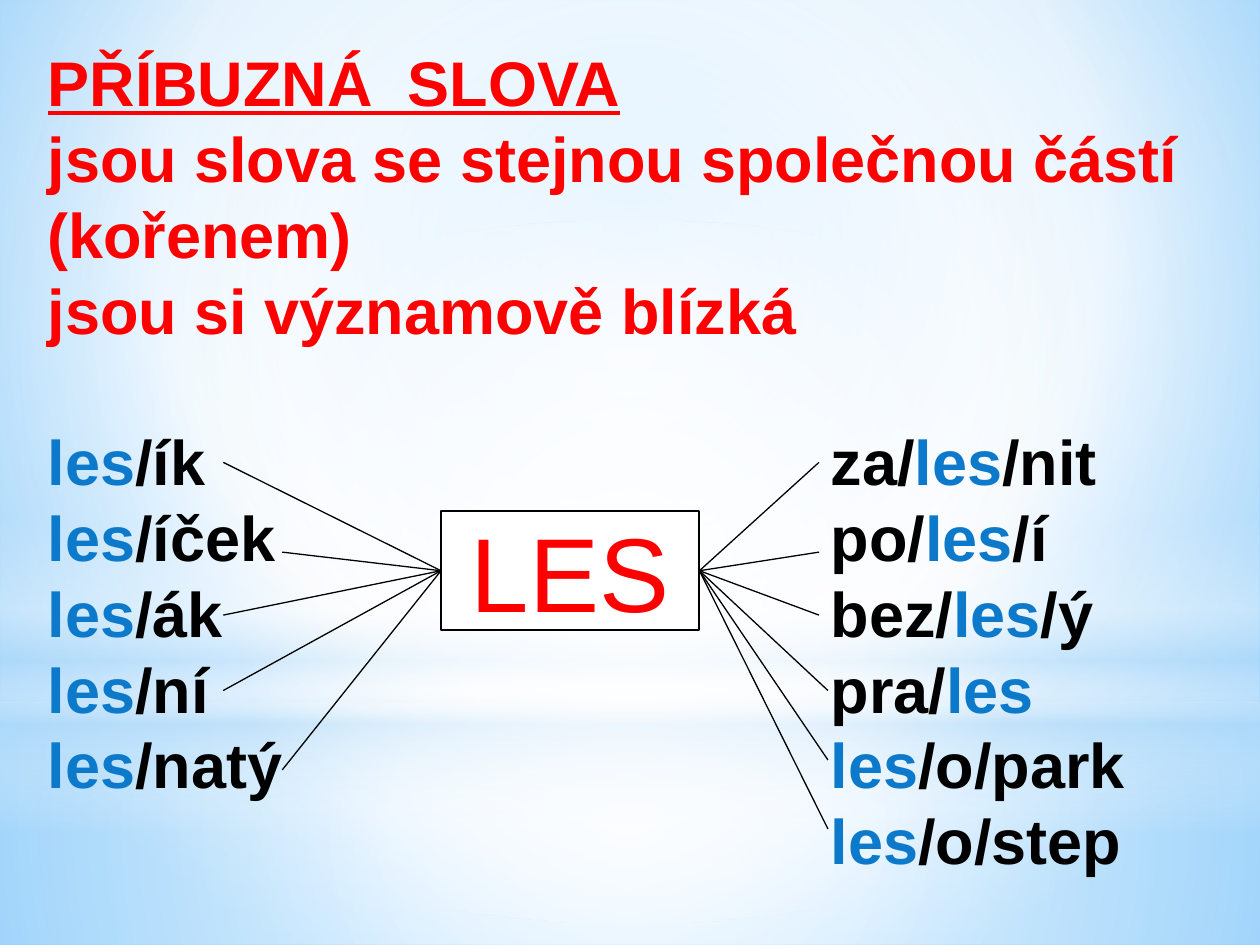
import pptx
import pptx.util
import pptx.dml.color
import pptx.enum.shapes
import pptx.enum.text
import pptx.oxml
import pptx.oxml.ns

Cm, Pt = pptx.util.Cm, pptx.util.Pt
SHAPE = pptx.enum.shapes.MSO_SHAPE
RED, BLUE, BLACK, WHITE, SKY = "FF0000", "0D79CA", "000000", "FFFFFF", "B4DCFA"
PAGE_WIDTH, PAGE_HEIGHT = 25.4, 19.05
ROOT = "les"
CENTRE = (50, 50, 50, 50)
HEADING = ["PŘÍBUZNÁ  SLOVA", "jsou slova se stejnou společnou částí",
           "(kořenem)", "jsou si významově blízká"]
LEFT_WORDS = ["les/ík", "les/íček", "les/ák", "les/ní", "les/natý"]
RIGHT_WORDS = ["za/les/nit", "po/les/í", "bez/les/ý", "pra/les", "les/o/park", "les/o/step"]
LEFT_ENDS = [(4.5, 9.32), (5.69, 11.13), (4.5, 12.4), (4.5, 13.92), (5.69, 15.52)]
RIGHT_ENDS = [(16.51, 9.32), (16.51, 11.13), (16.51, 12.4),
              (16.69, 13.92), (16.69, 15.32), (16.69, 16.71)]


def colour(hex_code):
    """Return the colour for a hex string."""
    return pptx.dml.color.RGBColor.from_string(hex_code)


def paint_gradient(fill, owner, stops, focus=None):
    """Fill with (position, colour, opacity) stops, circular around focus or else vertical."""
    fill.gradient()
    gradient = owner.xpath(".//a:gradFill")[0]
    stop_xml = "".join(
        f'<a:gs pos="{position * 1000}"><a:srgbClr val="{hex_code}">'
        f'<a:alpha val="{opacity * 1000}"/></a:srgbClr></a:gs>'
        for position, hex_code, opacity in stops)
    if focus:
        sides = " ".join(f'{side}="{value * 1000}"' for side, value in zip("ltrb", focus))
        direction = f'<a:path path="circle"><a:fillToRect {sides}/></a:path>'
    else:
        direction = '<a:lin ang="5400000" scaled="0"/>'
    gradient.getparent().replace(gradient, pptx.oxml.parse_xml(
        f'<a:gradFill {pptx.oxml.ns.nsdecls("a")} rotWithShape="1">'
        f'<a:gsLst>{stop_xml}</a:gsLst>{direction}</a:gradFill>'))


def add_glow(slide, outline, top, height, stops, focus=None):
    """Add a full-width gradient layer of the backdrop."""
    glow = slide.shapes.add_shape(outline, 0, Cm(top), Cm(PAGE_WIDTH), Cm(height))
    glow.shadow.inherit = False
    glow.line.fill.background()
    paint_gradient(glow.fill, glow._element, stops, focus)


def add_backdrop(slide):
    """Paint the sky background and its soft layers."""
    paint_gradient(slide.background.fill, slide._element,
                   [(0, "9ED5FF", 100), (60, WHITE, 100), (100, "5BB9FF", 100)],
                   (20, 10, 20, 60))
    horizon = 14.17
    add_glow(slide, SHAPE.RECTANGLE, horizon, PAGE_HEIGHT - horizon,
             [(0, WHITE, 91), (37, WHITE, 76), (100, SKY, 79)], CENTRE)
    add_glow(slide, SHAPE.RECTANGLE, 0, horizon,
             [(0, WHITE, 89), (48, WHITE, 62), (100, SKY, 79)], CENTRE)
    add_glow(slide, SHAPE.RECTANGLE, 10.46, 6.35,
             [(0, WHITE, 0), (29, WHITE, 30), (45, SKY, 40),
              (55, WHITE, 26), (65, SKY, 60), (100, WHITE, 0)])
    add_glow(slide, SHAPE.OVAL, 4.45, horizon, [(0, WHITE, 100), (56, WHITE, 0)], CENTRE)


def style_run(run, hex_code, size=36, bold=True):
    """Set the font of a run."""
    run.font.name = "Arial"
    run.font.size = Pt(size)
    run.font.bold = bold
    run.font.color.rgb = colour(hex_code)


def add_lines(slide, left, top, width, lines):
    """Add a text box with one paragraph a line and return its paragraphs."""
    box = slide.shapes.add_textbox(Cm(left), Cm(top), Cm(width), Cm(1.53 * len(lines) + 0.25))
    frame = box.text_frame
    frame.word_wrap = True
    frame.text = "\n".join(lines)
    for paragraph in frame.paragraphs:
        paragraph.line_spacing = Pt(43.4)
    return frame.paragraphs


def add_heading(slide, left, top, width):
    """Add the definition with its underlined first line."""
    paragraphs = add_lines(slide, left, top, width, HEADING)
    for paragraph in paragraphs:
        style_run(paragraph.runs[0], RED)
    paragraphs[0].runs[0].font.underline = True


def add_words(slide, left, top, width, words):
    """Add a column of words with the shared root in blue."""
    for paragraph, word in zip(add_lines(slide, left, top, width, words), words):
        before, root, after = word.partition(ROOT)
        paragraph.clear()
        for part, hex_code in ((before, BLACK), (root, BLUE), (after, BLACK)):
            if part:
                run = paragraph.add_run()
                run.text = part
                style_run(run, hex_code)


def add_root(slide, left, top, width, height):
    """Add the boxed root and the rays to its related words."""
    root = slide.shapes.add_shape(SHAPE.RECTANGLE, Cm(left), Cm(top), Cm(width), Cm(height))
    root.shadow.inherit = False
    root.fill.solid()
    root.fill.fore_color.rgb = colour(WHITE)
    root.line.color.rgb = colour(BLACK)
    root.line.width = Pt(1.25)
    frame = root.text_frame
    frame.text = "LES"
    frame.vertical_anchor = pptx.enum.text.MSO_ANCHOR.MIDDLE
    frame.paragraphs[0].alignment = pptx.enum.text.PP_ALIGN.CENTER
    style_run(frame.paragraphs[0].runs[0], RED, 60, False)
    for hub, ends in ((left, LEFT_ENDS), (left + width, RIGHT_ENDS)):
        for x, y in ends:
            ray = slide.shapes.add_connector(
                pptx.enum.shapes.MSO_CONNECTOR.STRAIGHT,
                Cm(x), Cm(y), Cm(hub), Cm(top + height / 2))
            ray.line.color.rgb = colour(BLACK)
            ray.line.width = Pt(0.75)
            ray._element.spPr.append(pptx.oxml.parse_xml(
                f'<a:effectLst {pptx.oxml.ns.nsdecls("a")}/>'))


def main():
    """Build and save the slide."""
    deck = pptx.Presentation()
    deck.slide_width, deck.slide_height = Cm(PAGE_WIDTH), Cm(PAGE_HEIGHT)
    slide = deck.slides.add_slide(deck.slide_layouts[6])
    add_backdrop(slide)
    add_heading(slide, 0.71, 0.74, 23.9)
    add_words(slide, 0.71, 8.38, 7, LEFT_WORDS)
    add_words(slide, 16.5, 8.38, 8, RIGHT_WORDS)
    add_root(slide, 8.89, 10.31, 5.21, 2.39)
    deck.save("out.pptx")


if __name__ == "__main__":
    main()
